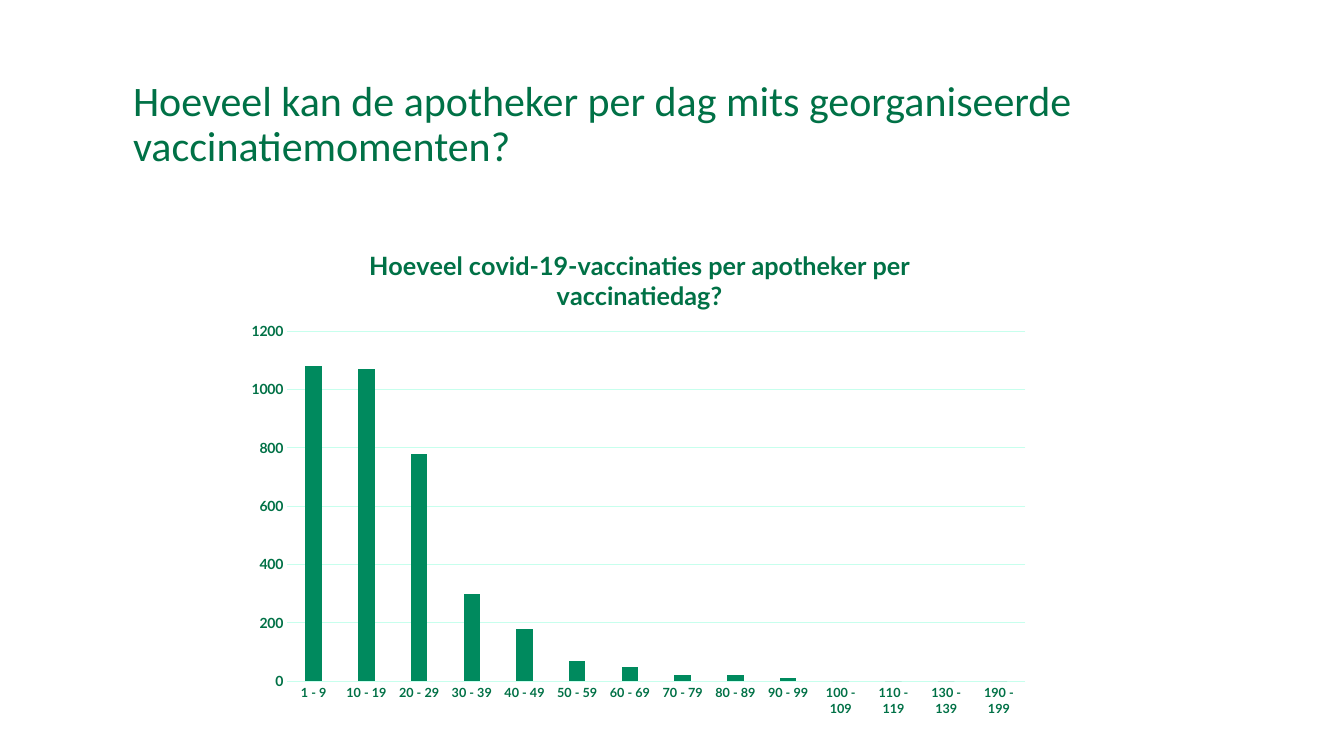
from dataclasses import dataclass

from lxml.etree import SubElement
from pptx import Presentation
from pptx.chart.axis import _BaseAxis as Axis
from pptx.chart.chart import Chart
from pptx.chart.data import CategoryChartData
from pptx.dml.color import RGBColor
from pptx.enum.chart import XL_CHART_TYPE as ChartType, XL_TICK_MARK as TickMark
from pptx.enum.text import MSO_ANCHOR as Anchor, MSO_AUTO_SIZE as AutoSize, PP_ALIGN as Align
from pptx.oxml.ns import qn
from pptx.text.text import Font, TextFrame
from pptx.util import Cm, Pt


@dataclass(frozen=True)
class Theme:
    text: RGBColor = RGBColor(0x00, 0x71, 0x46)
    bar: RGBColor = RGBColor(0x00, 0x8A, 0x5E)
    grid: RGBColor = RGBColor(0xC7, 0xFF, 0xED)
    heading_font: str = "Calibri"
    chart_font: str = "Lato"
    heading_size: float = 30
    chart_title_size: float = 18
    value_size: float = 10
    category_size: float = 9
    line_width: float = 0.75


@dataclass(frozen=True)
class Bin:
    label: str
    pharmacists: int


THEME = Theme()
CHART_WIDTH, CHART_HEIGHT = Cm(20.35), Cm(12.6)
BINS = [
    Bin("1 - 9", 1080),
    Bin("10 - 19", 1070),
    Bin("20 - 29", 780),
    Bin("30 - 39", 300),
    Bin("40 - 49", 180),
    Bin("50 - 59", 70),
    Bin("60 - 69", 50),
    Bin("70 - 79", 20),
    Bin("80 - 89", 20),
    Bin("90 - 99", 10),
    Bin("100 - 109", 0),
    Bin("110 - 119", 0),
    Bin("130 - 139", 0),
    Bin("190 - 199", 0),
]


def format_font(font: Font, *, name: str, size: float, bold: bool) -> None:
    font.name = name
    font.size = Pt(size)
    font.bold = bold
    font.color.rgb = THEME.text


def write_text(frame: TextFrame, text: str, *, name: str, size: float,
               bold: bool = False, align: Align = Align.LEFT,
               line_spacing: float = 1.0) -> None:
    paragraph = frame.paragraphs[0]
    paragraph.alignment = align
    paragraph.line_spacing = line_spacing
    run = paragraph.add_run()
    run.text = text
    format_font(run.font, name=name, size=size, bold=bold)


def style_axis(axis: Axis, size: float) -> None:
    axis.major_tick_mark = TickMark.NONE
    axis.minor_tick_mark = TickMark.NONE
    format_font(axis.tick_labels.font, name=THEME.chart_font, size=size, bold=True)


def place_plot(chart: Chart, left: Cm, top: Cm, width: Cm, height: Cm) -> None:
    plot_area = chart._chartSpace.chart.plotArea
    for old_layout in plot_area.findall(qn("c:layout")):
        plot_area.remove(old_layout)
    layout = SubElement(plot_area, qn("c:layout"))
    plot_area.insert(0, layout)
    manual = SubElement(layout, qn("c:manualLayout"))
    settings = {
        "layoutTarget": "inner", "xMode": "edge", "yMode": "edge",
        "x": left / CHART_WIDTH, "y": top / CHART_HEIGHT,
        "w": width / CHART_WIDTH, "h": height / CHART_HEIGHT,
    }
    for tag, value in settings.items():
        SubElement(manual, qn(f"c:{tag}")).set("val", str(value))


def style_chart(chart: Chart) -> None:
    chart.has_legend = False
    format_font(chart.font, name=THEME.chart_font, size=THEME.value_size, bold=False)
    chart.has_title = True
    chart.chart_title.include_in_layout = False
    write_text(chart.chart_title.text_frame,
               "Hoeveel covid-19-vaccinaties per apotheker per vaccinatiedag?",
               name=THEME.chart_font, size=THEME.chart_title_size,
               bold=True, align=Align.CENTER)

    plot = chart.plots[0]
    plot.gap_width = 219
    plot.overlap = -27
    plot.vary_by_categories = False
    bar_fill = plot.series[0].format.fill
    bar_fill.solid()
    bar_fill.fore_color.rgb = THEME.bar

    category_axis, value_axis = chart.category_axis, chart.value_axis
    style_axis(category_axis, THEME.category_size)
    style_axis(value_axis, THEME.value_size)
    value_axis.minimum_scale = 0
    value_axis.maximum_scale = 1200
    value_axis.major_unit = 200
    value_axis.format.line.fill.background()
    value_axis.has_major_gridlines = True
    for line in (category_axis.format.line, value_axis.major_gridlines.format.line):
        line.color.rgb = THEME.grid
        line.width = Pt(THEME.line_width)
    place_plot(chart, Cm(1.3), Cm(2.63), Cm(18.6), Cm(8.82))


def main() -> None:
    presentation = Presentation()
    presentation.slide_width = Cm(33.87)
    presentation.slide_height = Cm(19.05)
    slide = presentation.slides.add_slide(presentation.slide_layouts[5])

    title = slide.shapes.title
    title.left, title.top, title.width, title.height = Cm(3.1), Cm(1.52), Cm(28.24), Cm(3.28)
    title.text_frame.word_wrap = True
    title.text_frame.auto_size = AutoSize.NONE
    title.text_frame.vertical_anchor = Anchor.MIDDLE
    write_text(title.text_frame,
               "Hoeveel kan de apotheker per dag mits georganiseerde vaccinatiemomenten?",
               name=THEME.heading_font, size=THEME.heading_size, line_spacing=0.9)

    chart_data = CategoryChartData()
    chart_data.categories = [group.label for group in BINS]
    chart_data.add_series("Series 1", [group.pharmacists for group in BINS])
    chart_shape = slide.shapes.add_chart(ChartType.COLUMN_CLUSTERED, Cm(5.94), Cm(5.72),
                                         CHART_WIDTH, CHART_HEIGHT, chart_data)
    style_chart(chart_shape.chart)
    presentation.save("out.pptx")


if __name__ == "__main__":
    main()
